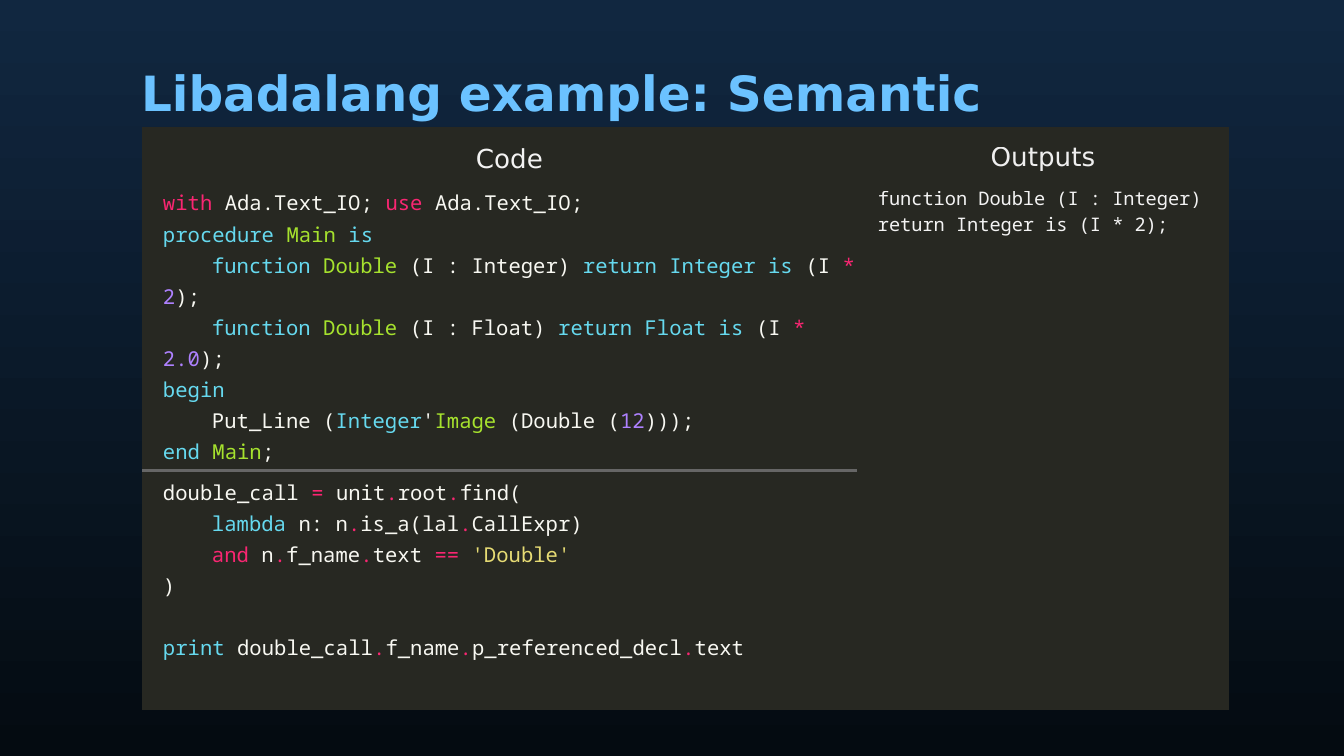
import pptx
import pptx.dml.color
import pptx.enum.text
import pptx.oxml
import pptx.oxml.ns
import pptx.util

EMU_PER_PX = 914400 / 134.4
SANS, MONO = "DejaVu Sans", "Noto Sans Mono"
PANEL, RULE = "272822", "666666"
PLAIN, PINK, CYAN, GREEN = "F8F8F2", "F92672", "66D9EF", "A6E22E"
PURPLE, YELLOW = "AE81FF", "E6DB74"


def px(length):
    return pptx.util.Emu(round(length * EMU_PER_PX))


def write(para, text, size=11, font=MONO, color=PLAIN, bold=False):
    span = para.add_run()
    span.text = text
    span.font.size = pptx.util.Pt(size)
    span.font.name = font
    span.font.bold = bold
    span.font.color.rgb = pptx.dml.color.RGBColor.from_string(color)


deck = pptx.Presentation()
deck.slide_width, deck.slide_height = px(1344), px(756)
page = deck.slides.add_slide(deck.slide_layouts[5])

# Background gradient, top to bottom
backdrop = page.background.fill
backdrop.gradient()
backdrop.gradient_angle = 270
for stop, color in zip(backdrop.gradient_stops, ("112740", "040B11")):
    stop.color.rgb = pptx.dml.color.RGBColor.from_string(color)

# Title
title = page.shapes.title
title.left, title.top, title.width, title.height = px(138), px(50), px(1067), px(79)
frame = title.text_frame
frame.margin_left = frame.margin_right = frame.margin_top = frame.margin_bottom = px(3)
frame.vertical_anchor = pptx.enum.text.MSO_ANCHOR.MIDDLE
para = frame.paragraphs[0]
para.alignment = pptx.enum.text.PP_ALIGN.LEFT
para.line_spacing = 1.1
write(para, "Libadalang example: Semantic", size=26, font=SANS, color="6BC2FF", bold=True)

# Table grid
widths, heights = (715, 352), (44, 216, 230)
table = page.shapes.add_table(
    len(heights), len(widths), px(152), px(137), px(sum(widths)), px(sum(heights))
).table
table.first_row = table.horz_banding = False
for column, width in zip(table.columns, widths):
    column.width = px(width)
for row, height in zip(table.rows, heights):
    row.height = px(height)

# Cell borders and fills, with a thin rule between the two code samples
ruled_sides = {(1, 0, "B"), (2, 0, "T")}
for r in range(len(heights)):
    for c in range(len(widths)):
        cell = table.cell(r, c)
        cell.margin_left = cell.margin_right = px(11)
        cell.margin_top = cell.margin_bottom = px(5)
        properties = cell._tc.get_or_add_tcPr()
        for side in "LRTB":
            color, points = (RULE, 1.5) if (r, c, side) in ruled_sides else (PANEL, 12)
            properties.append(pptx.oxml.parse_xml(
                f'<a:ln{side} {pptx.oxml.ns.nsdecls("a")} w="{pptx.util.Pt(points)}">'
                f'<a:solidFill><a:srgbClr val="{color}"/></a:solidFill></a:ln{side}>'))
        cell.fill.solid()
        cell.fill.fore_color.rgb = pptx.dml.color.RGBColor.from_string(PANEL)

# Column headings
table.cell(0, 0).vertical_anchor = pptx.enum.text.MSO_ANCHOR.MIDDLE
for c, (heading, color, space) in enumerate((("Code", "F3F3F3", 0), ("Outputs", "EFEFEF", 3.6))):
    para = table.cell(0, c).text_frame.paragraphs[0]
    para.alignment = pptx.enum.text.PP_ALIGN.CENTER
    para.space_before = pptx.util.Pt(space)
    write(para, heading, size=14, font=SANS, color=color)

# Code samples: each line is (indent level, space before in points, coloured spans)
DOT = (".", PINK)
ada_lines = [
    (0, 0, [("with ", PINK), ("Ada.Text_IO; ", PLAIN), ("use ", PINK), ("Ada.Text_IO;", PLAIN)]),
    (0, 0, [("procedure ", CYAN), ("Main ", GREEN), ("is", CYAN)]),
]
for kind, factor in (("Integer", "2"), ("Float", "2.0")):
    ada_lines.append((1, 0, [
        ("function ", CYAN), ("Double ", GREEN), (f"(I : {kind}) ", PLAIN),
        (f"return {kind} is ", CYAN), ("(I ", PLAIN), ("* ", PINK),
        (factor, PURPLE), (");", PLAIN)]))
ada_lines += [
    (0, 0, [("begin", CYAN)]),
    (1, 0, [("Put_Line (", PLAIN), ("Integer", CYAN), ("'", PLAIN), ("Image ", GREEN),
            ("(Double (", PLAIN), ("12", PURPLE), (")));", PLAIN)]),
    (0, 0, [("end ", CYAN), ("Main", GREEN), (";", PLAIN)]),
]
python_lines = [
    (0, 0, [("double_call ", PLAIN), ("= ", PINK), ("unit", PLAIN), DOT,
            ("root", PLAIN), DOT, ("find(", PLAIN)]),
    (1, 0, [("lambda ", CYAN), ("n: n", PLAIN), DOT, ("is_a(lal", PLAIN), DOT,
            ("CallExpr)", PLAIN)]),
    (1, 0, [("and ", PINK), ("n", PLAIN), DOT, ("f_name", PLAIN), DOT, ("text ", PLAIN),
            ("== ", PINK), ("'Double'", YELLOW)]),
    (0, 0, [(")", PLAIN)]),
    (0, 16.5, [("print ", CYAN), ("double_call", PLAIN), DOT, ("f_name", PLAIN), DOT,
               ("p_referenced_decl", PLAIN), DOT, ("text", PLAIN)]),
]
for r, lines in ((1, ada_lines), (2, python_lines)):
    frame = table.cell(r, 0).text_frame
    for number, (level, space, spans) in enumerate(lines):
        para = frame.add_paragraph() if number else frame.paragraphs[0]
        para.line_spacing = 1.11
        para.space_before = pptx.util.Pt(space)
        # Only the first row of a wrapped line is indented
        para._p.get_or_add_pPr().set("indent", str(px(49 * level)))
        for text, color in spans:
            write(para, text, color=color)

# Output
para = table.cell(1, 1).text_frame.paragraphs[0]
para.space_before = pptx.util.Pt(3.6)
write(para, "function Double (I : Integer) return Integer is (I * 2);", size=10, color="F3F3F3")

deck.save("out.pptx")
